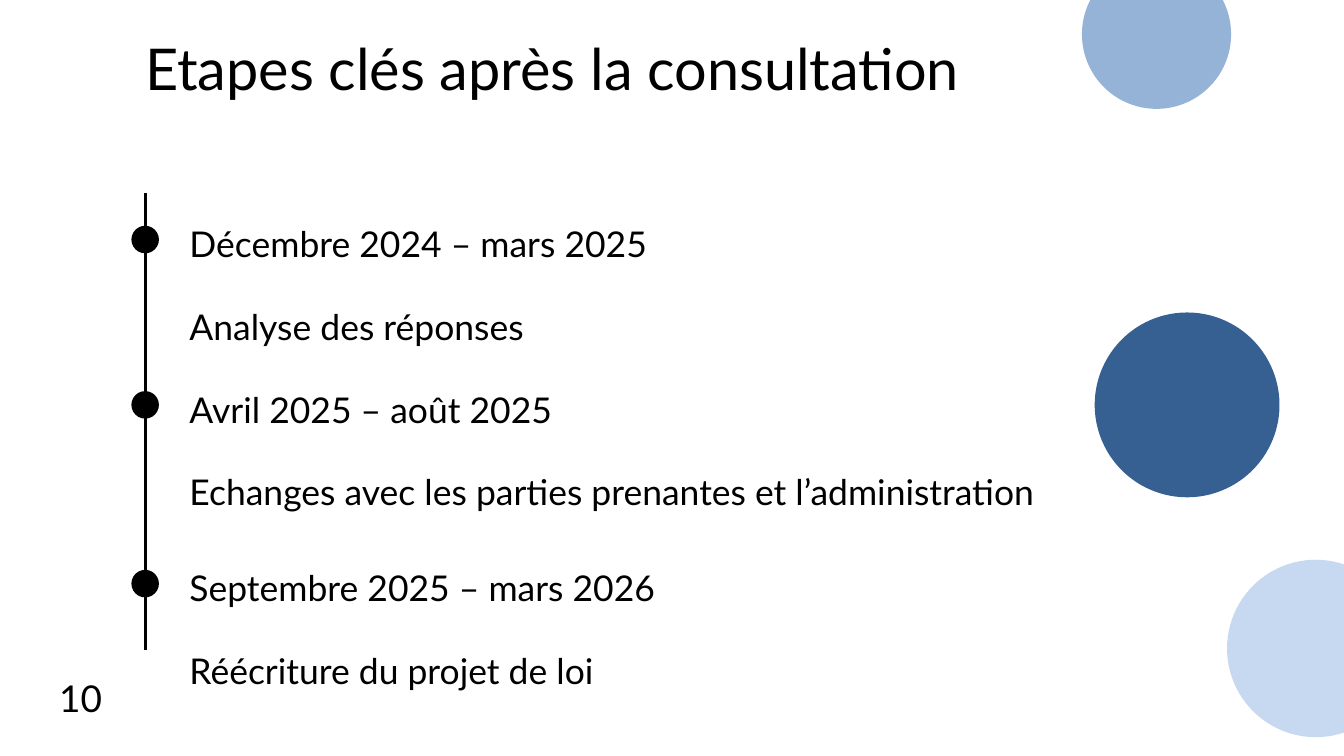
"""Build the slide of key steps after the consultation."""
from lxml import etree
from pptx import Presentation
from pptx import util as u
from pptx.dml.color import RGBColor
from pptx.enum import shapes, text
from pptx.oxml.ns import qn

COLORS = {"ink": "000000", "pale": "C6D9F1", "mid": "95B3D7", "deep": "376092"}
AXIS_X = 2.16
DOT = 0.41
EVENTS = [
    (3.33, "Décembre 2024 – mars 2025", "Analyse des réponses"),
    (5.79, "Avril 2025 – août 2025", "Echanges avec les parties prenantes et l’administration"),
    (8.45, "Septembre 2025 – mars 2026", "Réécriture du projet de loi"),
]
CIRCLES = [(18.26, 8.33, 2.64, "pale"), (16.1, -0.6, 2.22, "mid"), (16.29, 4.65, 2.75, "deep")]


class Deck:
    """Hold the style and the current slide."""

    def __init__(self, width, height):
        """Start a presentation with one title slide of the given size."""
        self.prs = Presentation()
        self.prs.slide_width, self.prs.slide_height = u.Inches(width), u.Inches(height)
        self.s = self.prs.slides.add_slide(self.prs.slide_layouts[5])
        self.font = {"name": "Lato", "bold": False}

    def color(self, name):
        """Return the named colour."""
        return RGBColor.from_string(COLORS[name])

    def fill_text(self, sp, lines, size, leading):
        """Fill a shape with left-aligned lines, one empty line height apart."""
        tf = sp.text_frame
        frame = {"margin_left": 0, "margin_top": 0, "margin_right": 0, "margin_bottom": 0,
                 "word_wrap": True, "auto_size": text.MSO_AUTO_SIZE.NONE,
                 "vertical_anchor": text.MSO_ANCHOR.TOP}
        for key, value in frame.items():
            setattr(tf, key, value)
        for i, line in enumerate(lines):
            p = tf.add_paragraph() if i else tf.paragraphs[0]
            p.alignment = text.PP_ALIGN.LEFT
            p.line_spacing = u.Pt(leading)
            p.space_before = u.Pt(leading if i else 0)
            r = p.add_run()
            r.text = line
            for key, value in {**self.font, "size": u.Pt(size)}.items():
                setattr(r.font, key, value)
            r.font.color.rgb = self.color("ink")

    def title(self, box, line, size, leading):
        """Place and fill the title placeholder."""
        sp = self.s.shapes.title
        for key, value in zip(("left", "top", "width", "height"), box):
            setattr(sp, key, u.Inches(value))
        self.fill_text(sp, [line], size, leading)

    def text(self, box, lines, size, leading):
        """Add a text box."""
        sp = self.s.shapes.add_textbox(*map(u.Inches, box))
        self.fill_text(sp, lines, size, leading)

    def circle(self, left, top, size, color):
        """Add a plain filled circle."""
        sp = self.s.shapes.add_shape(shapes.MSO_SHAPE.OVAL, *map(u.Inches, (left, top, size, size)))
        sp.shadow.inherit = False
        sp.fill.solid()
        sp.fill.fore_color.rgb = self.color(color)
        sp.line.fill.background()

    def vertical(self, x, top, bottom, width):
        """Add a vertical line."""
        line = self.s.shapes.add_connector(
            shapes.MSO_CONNECTOR.STRAIGHT, *map(u.Inches, (x, top, x, bottom)))
        line.line.color.rgb = self.color("ink")
        line.line.width = u.Pt(width)
        etree.SubElement(line._element.spPr, qn("a:effectLst"))


def main():
    """Draw the timeline and save it."""
    deck = Deck(20, 11.25)
    deck.vertical(AXIS_X, 2.87, 9.67, 3)
    deck.text((0.88, 9.94, 1.29, 0.74), ["10"], 39.6, 55.5)
    for circle in CIRCLES:
        deck.circle(*circle)
    deck.title((AXIS_X, 0.53, 12.49, 2.02), "Etapes clés après la consultation", 61.7, 71.6)
    for top, period, step in EVENTS:
        deck.circle(AXIS_X - DOT / 2, top + 0.03, DOT, "ink")
        deck.text((2.82, top, 13.76, 1.85), [period, step], 38, 44.1)
    deck.prs.save("out.pptx")


if __name__ == "__main__":
    main()
